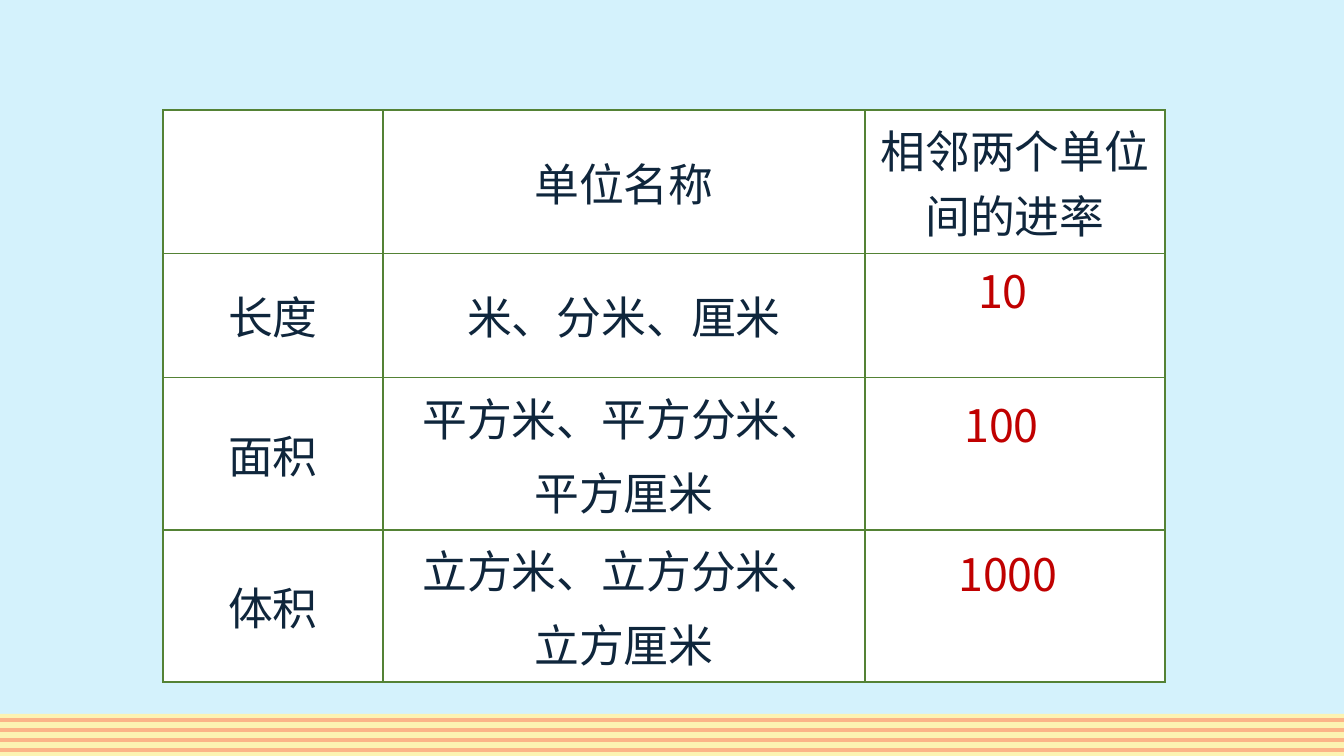
from itertools import product

from lxml.etree import SubElement
from pptx import Presentation
from pptx.dml.color import RGBColor
from pptx.enum.shapes import MSO_CONNECTOR, MSO_SHAPE
from pptx.enum.text import MSO_ANCHOR, MSO_AUTO_SIZE, PP_ALIGN
from pptx.oxml.ns import qn
from pptx.util import Emu, Pt

SLIDE_WIDTH, SLIDE_HEIGHT = 1344, 756
FONT = "Noto Sans CJK SC"
COLORS = {
    "sky": "D4F2FC",
    "band": "FCF3B2",
    "stripe": "FBB488",
    "cell": "FFFFFF",
    "border": "548235",
    "ink": "0F263C",
    "answer": "C00000",
}
COLUMN_WIDTHS = [220, 482, 300]
ROW_HEIGHTS = [110, 124, 147, 147]
ROWS = [
    ["", "单位名称", "相邻两个单位间的进率"],
    ["长度", "米、分米、厘米", ""],
    ["面积", "平方米、平方分米、\n平方厘米", ""],
    ["体积", "立方米、立方分米、\n立方厘米", ""],
]
ANSWERS = [("10", 960, 257, 86), ("100", 943, 391, 117), ("1000", 934, 540, 148)]


def px(length):
    """Turn px into EMU."""
    return Emu(round(length * 914400 / 134.4))


def color(name):
    """Look up a colour by name."""
    return RGBColor.from_string(COLORS[name])


def write_text(frame, text, ink="ink", size=24, gap=4.8):
    """Write centred paragraphs, one for each line of text."""
    for index, line in enumerate(text.split("\n")):
        paragraph = frame.add_paragraph() if index else frame.paragraphs[0]
        paragraph.alignment = PP_ALIGN.CENTER
        if index:
            paragraph.space_before = Pt(gap)
        run = paragraph.add_run()
        run.text = line
        run.font.name = FONT
        run.font.size = Pt(size)
        run.font.color.rgb = color(ink)
        SubElement(run.font._element, qn("a:ea"), typeface=FONT)


def add_rectangle(slide, left, top, width, height, fill):
    """Add a plain filled rectangle."""
    shape = slide.shapes.add_shape(
        MSO_SHAPE.RECTANGLE, px(left), px(top), px(width), px(height))
    shape.shadow.inherit = False
    shape.fill.solid()
    shape.fill.fore_color.rgb = color(fill)
    shape.line.fill.background()


def add_striped_band(slide, left, top, width, height, stripes=4, pitch=10):
    """Add the band at the foot of the slide with its stripes."""
    add_rectangle(slide, left, top, width, height, "band")
    for index in range(stripes):
        level = px(top + 6 + index * pitch)
        stripe = slide.shapes.add_connector(
            MSO_CONNECTOR.STRAIGHT, px(left), level, px(left + width), level)
        stripe.line.color.rgb = color("stripe")
        stripe.line.width = Pt(2.25)
        SubElement(stripe._element.spPr, qn("a:effectLst"))


def add_borders(cell):
    """Draw a thin line on each side of a cell."""
    properties = cell._tc.get_or_add_tcPr()
    for side in ("lnL", "lnR", "lnT", "lnB"):
        line = SubElement(properties, qn(f"a:{side}"), w=str(Pt(1)))
        fill = SubElement(line, qn("a:solidFill"))
        SubElement(fill, qn("a:srgbClr"), val=COLORS["border"])


def add_unit_table(slide, left, top):
    """Add the table of units."""
    frame = slide.shapes.add_table(
        len(ROWS), len(COLUMN_WIDTHS), px(left), px(top),
        px(sum(COLUMN_WIDTHS)), px(sum(ROW_HEIGHTS)))
    table = frame.table
    for column, width in zip(table.columns, COLUMN_WIDTHS):
        column.width = px(width)
    for row, height in zip(table.rows, ROW_HEIGHTS):
        row.height = px(height)
    for row, column in product(range(len(ROWS)), range(len(COLUMN_WIDTHS))):
        cell = table.cell(row, column)
        add_borders(cell)
        cell.fill.solid()
        cell.fill.fore_color.rgb = color("cell")
        if ROWS[row][column]:
            last_column = column == len(COLUMN_WIDTHS) - 1
            cell.vertical_anchor = MSO_ANCHOR.TOP if last_column else MSO_ANCHOR.MIDDLE
            write_text(cell.text_frame, ROWS[row][column])


def add_answer(slide, text, left, top, width, height=69):
    """Add one red answer over the table."""
    box = slide.shapes.add_textbox(px(left), px(top), px(width), px(height))
    box.text_frame.word_wrap = False
    box.text_frame.auto_size = MSO_AUTO_SIZE.SHAPE_TO_FIT_TEXT
    write_text(box.text_frame, text, ink="answer")


def main():
    """Build and save the slide."""
    presentation = Presentation()
    presentation.slide_width = px(SLIDE_WIDTH)
    presentation.slide_height = px(SLIDE_HEIGHT)
    slide = presentation.slides.add_slide(presentation.slide_layouts[6])
    add_rectangle(slide, 0, 0, SLIDE_WIDTH, SLIDE_HEIGHT, "sky")
    add_striped_band(slide, 0, 714, SLIDE_WIDTH, SLIDE_HEIGHT - 714)
    add_unit_table(slide, 163, 110)
    for text, left, top, width in ANSWERS:
        add_answer(slide, text, left, top, width)
    presentation.save("out.pptx")


if __name__ == "__main__":
    main()
